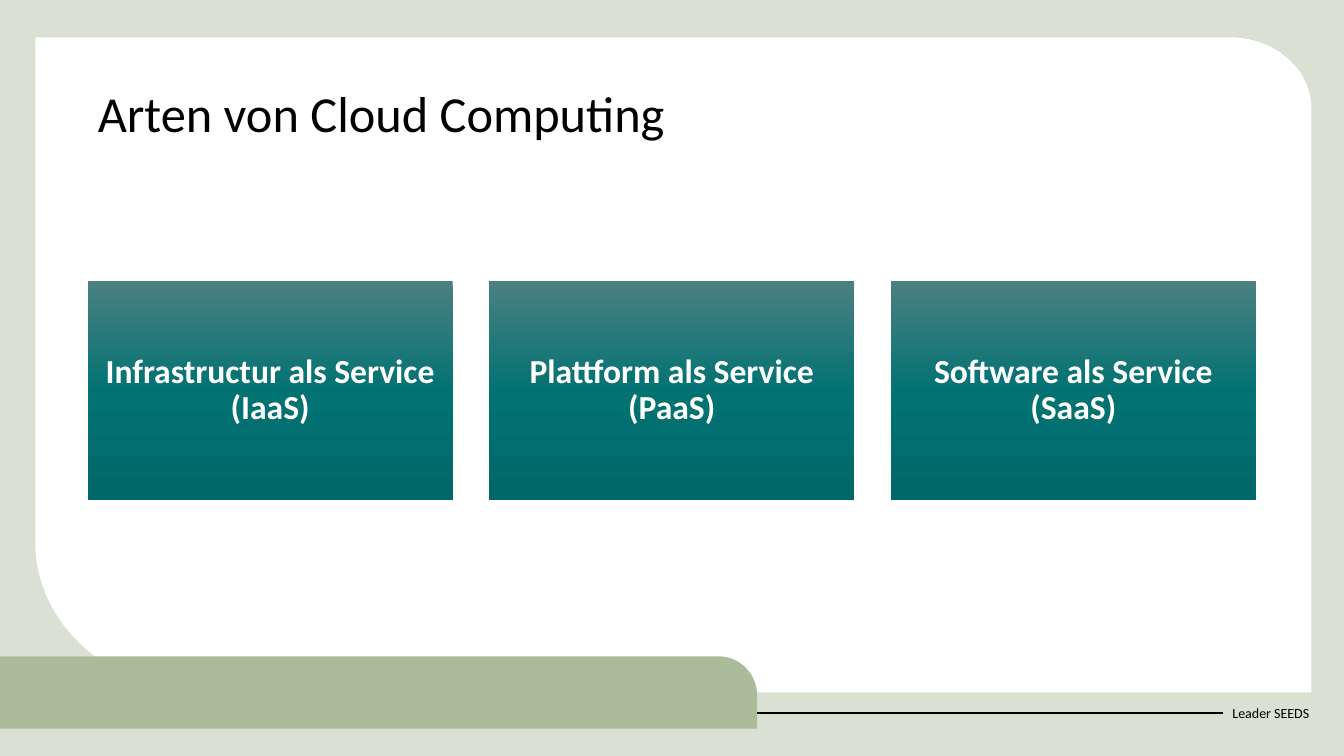
from copy import deepcopy
from dataclasses import dataclass
from math import cos, radians, sin

from lxml.etree import SubElement
from pptx import Presentation
from pptx.dml.color import RGBColor as Color
from pptx.enum.shapes import MSO_CONNECTOR as Connector, MSO_SHAPE as Shape
from pptx.enum.text import MSO_ANCHOR as Anchor, MSO_AUTO_SIZE as AutoSize, PP_ALIGN as Align
from pptx.oxml.ns import qn
from pptx.util import Cm, Pt


@dataclass(frozen=True)
class Theme:
    font: str = "Calibri"
    backdrop: str = "DAE0D2"
    panel: str = "FFFFFF"
    bar: str = "AABC99"
    ink: str = "000000"
    card_text: str = "FFFFFF"
    card_gradient: tuple = ("4B8081", "037273", "006869")
    title_size: int = 36
    card_size: int = 24
    footer_size: int = 10


theme = Theme()


def write(box, text, size, color=theme.ink, bold=False, align=Align.LEFT,
          anchor=Anchor.MIDDLE, line_spacing=1.0):
    frame = box.text_frame
    frame.word_wrap = True
    frame.auto_size = AutoSize.NONE
    frame.vertical_anchor = anchor
    para = frame.paragraphs[0]
    para.alignment = align
    para.line_spacing = line_spacing
    span = para.add_run()
    span.text = text
    span.font.name = theme.font
    span.font.size = Pt(size)
    span.font.bold = bold
    span.font.color.rgb = Color.from_string(color)


def arc(center_x, center_y, radius_x, radius_y, start):
    angles = [radians(start + step * 3) for step in range(31)]
    return [(center_x + radius_x * cos(angle), center_y + radius_y * sin(angle))
            for angle in angles]


deck = Presentation()
deck.slide_width, deck.slide_height = Cm(33.87), Cm(19.05)
page = deck.slides.add_slide(deck.slide_layouts[5])
page.background.fill.solid()
page.background.fill.fore_color.rgb = Color.from_string(theme.backdrop)

footer = page.shapes.add_textbox(Cm(30.81), Cm(17.45), Cm(2.57), Cm(1.02))

panel_outline = [(0.89, 0.94), *arc(30.99, 2.74, 2.06, 1.8, 270),
                 (33.05, 17.45), *arc(5.21, 13.67, 4.32, 3.78, 90)]
bar_outline = [(0, 18.36), (0, 16.54), *arc(18.11, 17.52, 0.97, 0.98, 270),
               (19.08, 18.36)]

outlines = []
for outline, color in ((panel_outline, theme.panel), (bar_outline, theme.bar)):
    points = [(Cm(x), Cm(y)) for x, y in outline]
    builder = page.shapes.build_freeform(*points[0], scale=1.0)
    builder.add_line_segments(points[1:], close=True)
    surface = builder.convert_to_shape()
    surface.shadow.inherit = False
    surface.fill.solid()
    surface.fill.fore_color.rgb = Color.from_string(color)
    surface.line.fill.background()
    outlines.append(surface)
panel, bar = outlines

rule = page.shapes.add_connector(Connector.STRAIGHT, 0, Cm(17.96), Cm(30.81), Cm(17.96))
rule.end_connect(footer, 1)
rule.line.width = Pt(1.5)
rule.line.color.rgb = Color.from_string(theme.ink)
SubElement(rule._element.spPr, qn("a:effectLst"))
bar._element.addprevious(rule._element)
panel._element.addnext(footer._element)
write(footer, "Leader SEEDS", size=theme.footer_size)

title = page.shapes.title
title.left, title.top, title.width, title.height = Cm(2.21), Cm(2.11), Cm(29.44), Cm(2.24)
bar._element.addnext(title._element)
write(title, "Arten von Cloud Computing", size=theme.title_size,
      anchor=Anchor.TOP, line_spacing=0.9)

services = ("Infrastructur als Service (IaaS)", "Plattform als Service (PaaS)",
            "Software als Service (SaaS)")
for column, service in enumerate(services):
    card = page.shapes.add_shape(Shape.RECTANGLE, Cm(2.21 + column * 10.12), Cm(7.09),
                                 Cm(9.2), Cm(5.51))
    card.shadow.inherit = False
    card.line.fill.background()
    card.fill.gradient()
    card.fill.gradient_angle = 270
    stop_list = card._element.spPr.find(".//" + qn("a:gsLst"))
    stop_list.append(deepcopy(stop_list[-1]))
    for index, stop in enumerate(card.fill.gradient_stops):
        stop.position = index / 2
        stop.color.rgb = Color.from_string(theme.card_gradient[index])
    frame = card.text_frame
    frame.margin_left = frame.margin_right = frame.margin_top = frame.margin_bottom = Cm(0.25)
    write(card, service, size=theme.card_size, color=theme.card_text, bold=True,
          align=Align.CENTER, line_spacing=0.9)

deck.save("out.pptx")
